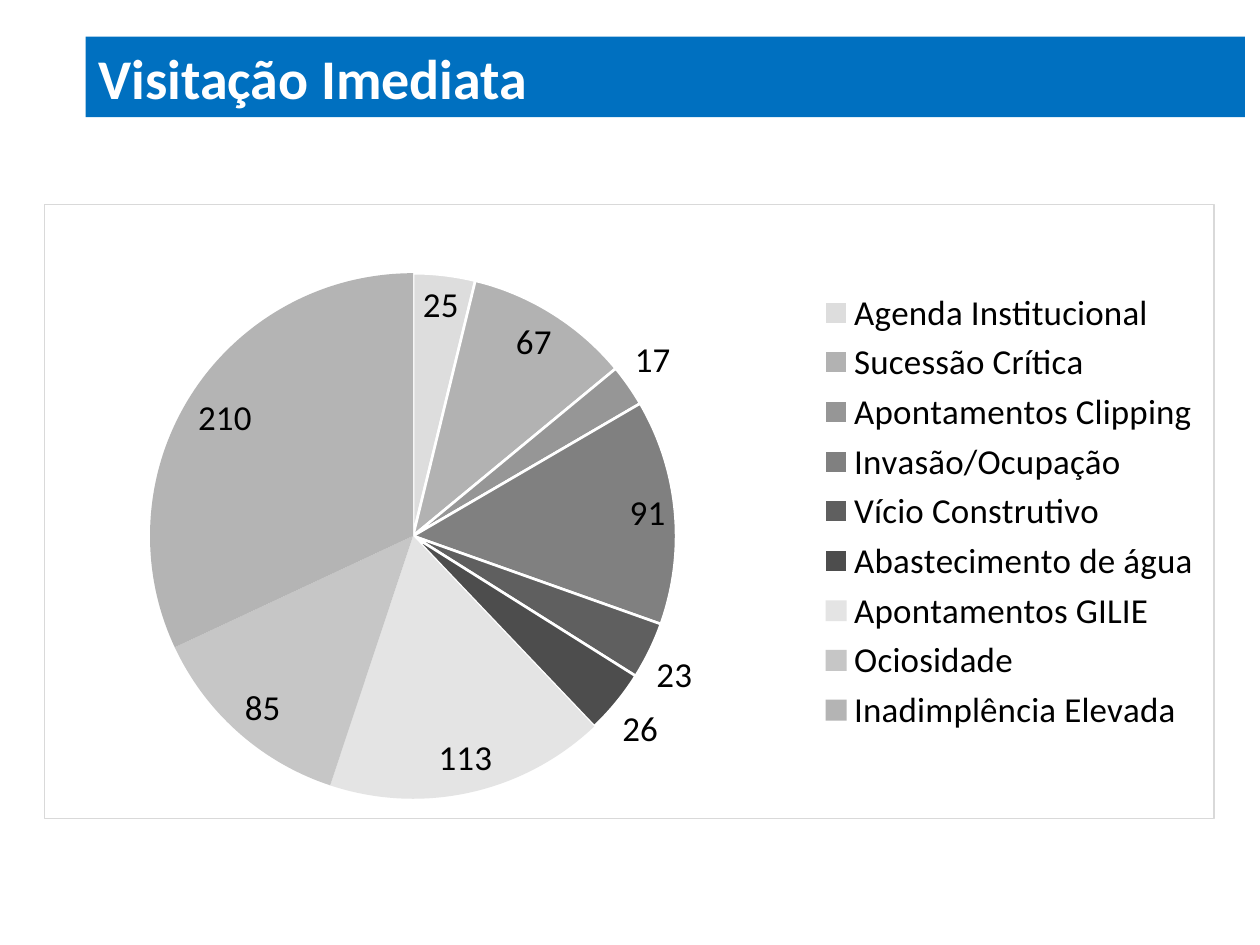
from typing import NamedTuple

from lxml import etree
from pptx import Presentation
from pptx.chart.data import CategoryChartData
from pptx.dml.color import RGBColor
from pptx.enum.chart import XL_CHART_TYPE, XL_LABEL_POSITION, XL_LEGEND_POSITION
from pptx.enum.text import MSO_ANCHOR, PP_ALIGN
from pptx.oxml import parse_xml
from pptx.oxml.ns import nsdecls, qn
from pptx.util import Inches, Pt

PIE = XL_CHART_TYPE.PIE
BEST_FIT = XL_LABEL_POSITION.BEST_FIT
RIGHT = XL_LEGEND_POSITION.RIGHT
LEFT = PP_ALIGN.LEFT
MIDDLE = MSO_ANCHOR.MIDDLE
FONT = "Calibri"


class Slice(NamedTuple):
    label: str
    visits: int
    color: str
    outlined: bool = True


SLICES = [
    Slice("Agenda Institucional", 25, "DDDDDD"),
    Slice("Sucessão Crítica", 67, "B2B2B2"),
    Slice("Apontamentos Clipping", 17, "969696"),
    Slice("Invasão/Ocupação", 91, "808080"),
    Slice("Vício Construtivo", 23, "5F5F5F"),
    Slice("Abastecimento de água", 26, "4D4D4D"),
    Slice("Apontamentos GILIE", 113, "E4E4E4", False),
    Slice("Ociosidade", 85, "C6C6C6", False),
    Slice("Inadimplência Elevada", 210, "B4B4B4", False),
]


def rgb(color: str) -> RGBColor:
    return RGBColor.from_string(color)


def set_font(font, size: float, color: str, bold: bool = False) -> None:
    font.name = FONT
    font.size = Pt(size)
    font.bold = bold
    font.color.rgb = rgb(color)


def manual_layout(x: float, y: float, width: float, height: float, inner: bool = False) -> etree._Element:
    """Return a chart layout in fractions of the chart area."""
    target = '<c:layoutTarget val="inner"/>' if inner else ""
    return parse_xml(
        f'<c:layout {nsdecls("c")}><c:manualLayout>{target}'
        '<c:xMode val="edge"/><c:yMode val="edge"/>'
        f'<c:x val="{x}"/><c:y val="{y}"/><c:w val="{width}"/><c:h val="{height}"/>'
        "</c:manualLayout></c:layout>"
    )


def frame_chart(chart, fill: str, border: str) -> None:
    """Give the chart area a fill and a thin border."""
    properties = parse_xml(
        f'<c:spPr {nsdecls("c", "a")}>'
        f'<a:solidFill><a:srgbClr val="{fill}"/></a:solidFill>'
        f'<a:ln w="{Pt(0.75)}"><a:solidFill><a:srgbClr val="{border}"/></a:solidFill></a:ln>'
        "</c:spPr>"
    )
    chart.element.find(qn("c:chart")).addnext(properties)


def add_title(slide, text: str) -> None:
    title = slide.shapes.title
    title.left, title.top = Inches(0.68), Inches(0.29)
    title.width, title.height = Inches(9.2), Inches(0.64)
    title.fill.solid()
    title.fill.fore_color.rgb = rgb("0070C0")
    title.text_frame.text = text
    title.text_frame.vertical_anchor = MIDDLE
    paragraph = title.text_frame.paragraphs[0]
    paragraph.alignment = LEFT
    set_font(paragraph.font, 32, "FFFFFF", bold=True)


def add_visits_chart(slide, slices: list[Slice]) -> None:
    data = CategoryChartData()
    data.categories = [item.label for item in slices]
    data.add_series("Series 1", [item.visits for item in slices])
    chart = slide.shapes.add_chart(
        PIE, Inches(0.35), Inches(1.62), Inches(9.29), Inches(4.88), data
    ).chart
    chart.has_title = False
    set_font(chart.font, 20, "000000")
    frame_chart(chart, "FFFFFF", "D9D9D9")

    chart.has_legend = True
    legend = chart.legend
    legend.position = RIGHT
    legend.include_in_layout = False
    set_font(legend.font, 20, "000000")
    legend_layout = manual_layout(0.66, 0.13, 0.33, 0.74)
    legend._element.find(qn("c:legendPos")).addnext(legend_layout)

    plot_area = chart.element.find(".//" + qn("c:plotArea"))
    for layout in plot_area.findall(qn("c:layout")):
        plot_area.remove(layout)
    plot_area.insert(0, manual_layout(0.09, 0.11, 0.45, 0.86, inner=True))

    plot = chart.plots[0]
    plot.vary_by_categories = True
    plot.has_data_labels = True
    labels = plot.data_labels
    labels.show_value = True
    labels.show_percentage = False
    labels.position = BEST_FIT
    set_font(labels.font, 20, "000000")

    for index, item in enumerate(slices):
        point_format = plot.series[0].points[index].format
        point_format.fill.solid()
        point_format.fill.fore_color.rgb = rgb(item.color)
        if item.outlined:
            point_format.line.color.rgb = rgb("FFFFFF")
            point_format.line.width = Pt(1.5)
        else:
            point_format.line.fill.background()


def main() -> None:
    presentation = Presentation()
    presentation.slide_width, presentation.slide_height = Inches(10), Inches(7.5)
    slide = presentation.slides.add_slide(presentation.slide_layouts.get_by_name("Title Only"))
    add_title(slide, "Visitação Imediata")
    add_visits_chart(slide, SLICES)
    presentation.save("out.pptx")


if __name__ == "__main__":
    main()
